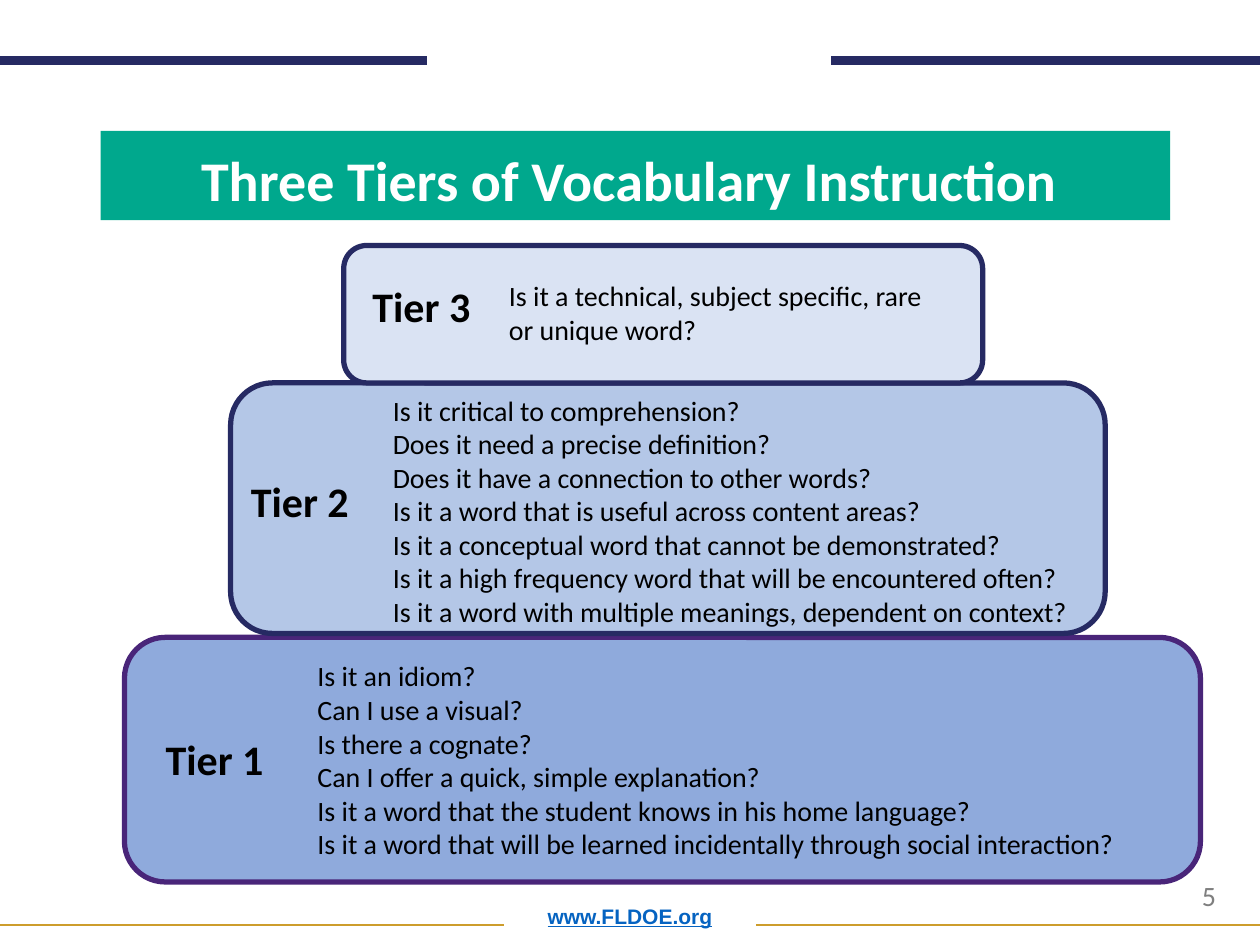
from lxml import etree
from pptx import Presentation
from pptx.dml.color import RGBColor
from pptx.enum.shapes import MSO_CONNECTOR, MSO_SHAPE
from pptx.enum.text import MSO_ANCHOR, MSO_AUTO_SIZE, PP_ALIGN
from pptx.oxml.ns import qn
from pptx.util import Cm, Pt

LEFT, CENTER = PP_ALIGN.LEFT, PP_ALIGN.CENTER
TOP, BOTTOM = MSO_ANCHOR.TOP, MSO_ANCHOR.BOTTOM
NAVY, GOLD, PURPLE = "262A63", "CD9D2C", "492579"

TITLE = "Three Tiers of Vocabulary Instruction "
URL = "www.FLDOE.org"
PAGE = "5"

# Boxes are left, top, width, height in cm
TIERS = [
    dict(name="Tier 1", fill="8FAADC", line=PURPLE,
         box=(2.51, 12.85, 21.69, 4.93), label=(3.07, 14.66, 2.51, 1.27),
         body=(6.15, 13.16, 17.5, 4.37),
         questions=["Is it an idiom?",
                    "Can I use a visual?",
                    "Is there a cognate?",
                    "Can I offer a quick, simple explanation?",
                    "Is it a word that the student knows in his home language?",
                    "Is it a word that will be learned incidentally through social interaction?"]),
    dict(name="Tier 2", fill="B4C7E7", line=NAVY,
         box=(4.65, 7.72, 17.63, 5.05), label=(4.65, 9.47, 2.79, 1.27),
         body=(7.67, 7.8, 17.5, 5.05),
         questions=["Is it critical to comprehension?",
                    "Does it need a precise definition?",
                    "Does it have a connection to other words?",
                    "Is it a word that is useful across content areas?",
                    "Is it a conceptual word that cannot be demonstrated?",
                    "Is it a high frequency word that will be encountered often?",
                    "Is it a word with multiple meanings, dependent on context?"]),
    dict(name="Tier 3", fill="DAE3F3", line=NAVY,
         box=(6.93, 4.95, 12.88, 2.77), label=(7.24, 5.54, 2.51, 1.27),
         body=(10.01, 5.49, 9.35, 1.63),
         questions=["Is it a technical, subject specific, rare",
                    "or unique word?"]),
]

# Start x, end x, y in cm, colour, width in points
RULES = [
    (0, 8.61, 1.22, NAVY, 5),
    (16.76, 25.4, 1.22, NAVY, 5),
    (0, 10.16, 18.64, GOLD, 1),
    (15.24, 25.4, 18.64, GOLD, 1),
]


def rgb(value):
    return RGBColor.from_string(value)


def write(tf, lines, size=16, color="000000", font="Calibri", bold=False,
          underline=False, align=LEFT, anchor=TOP, spacing=1.0, wrap=True):
    tf.auto_size = MSO_AUTO_SIZE.NONE
    tf.word_wrap = wrap
    tf.vertical_anchor = anchor
    for i, line in enumerate(lines):
        p = tf.paragraphs[0] if i == 0 else tf.add_paragraph()
        p.alignment, p.line_spacing = align, spacing
        r = p.add_run()
        r.text = line
        r.font.name, r.font.size = font, Pt(size)
        r.font.bold, r.font.underline = bold, underline
        r.font.color.rgb = rgb(color)


def add_text(slide, box, lines, **style):
    sp = slide.shapes.add_textbox(*map(Cm, box))
    write(sp.text_frame, lines, **style)


def add_rule(slide, x1, x2, y, color, width):
    line = slide.shapes.add_connector(MSO_CONNECTOR.STRAIGHT, Cm(x1), Cm(y), Cm(x2), Cm(y))
    line.line.color.rgb = rgb(color)
    line.line.width = Pt(width)
    etree.SubElement(line._element.spPr, qn("a:effectLst"))


def add_tier(slide, tier):
    sp = slide.shapes.add_shape(MSO_SHAPE.ROUNDED_RECTANGLE, *map(Cm, tier["box"]))
    sp.shadow.inherit = False
    sp.fill.solid()
    sp.fill.fore_color.rgb = rgb(tier["fill"])
    sp.line.color.rgb = rgb(tier["line"])
    sp.line.width = Pt(3)
    add_text(slide, tier["body"], tier["questions"])
    add_text(slide, tier["label"], [tier["name"]], size=24, bold=True,
             align=CENTER, wrap=False)


def add_title(slide):
    title = slide.shapes.title
    title.left, title.top, title.width, title.height = map(Cm, (2.03, 2.64, 21.56, 1.8))
    title.fill.solid()
    title.fill.fore_color.rgb = rgb("00A88D")
    write(title.text_frame, [TITLE], size=32, color="FFFFFF", bold=True,
          align=CENTER, anchor=BOTTOM, spacing=0.9)


def main():
    prs = Presentation()
    prs.slide_width, prs.slide_height = Cm(25.4), Cm(19.05)
    slide = prs.slides.add_slide(prs.slide_layouts[5])
    add_title(slide)
    for rule in RULES:
        add_rule(slide, *rule)
    add_text(slide, (1.75, 17.78, 21.9, 1.07), [URL], size=12, color="0563C1",
             font="Arial", bold=True, underline=True, align=CENTER,
             anchor=BOTTOM, spacing=0.9)
    add_text(slide, (23.98, 17.58, 1.32, 0.94), [PAGE], color="7F7F7F")
    for tier in TIERS:
        add_tier(slide, tier)
    prs.save("out.pptx")


if __name__ == "__main__":
    main()
